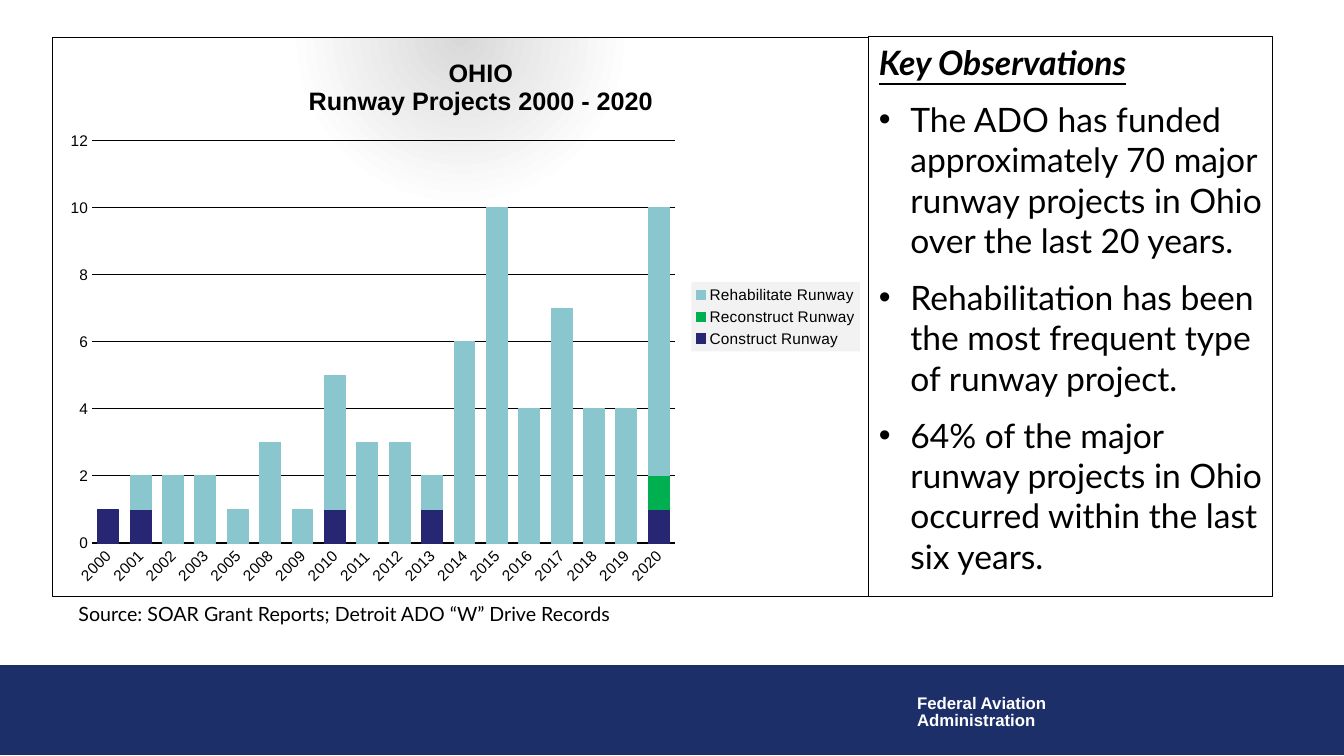
from lxml import etree
from pptx import Presentation
from pptx import util as u
from pptx.chart import data
from pptx.dml import color
from pptx.enum import chart as ch
from pptx.enum import shapes, text
from pptx.oxml import parse_xml
from pptx.oxml import ns

COLORS = {
    "black": "000000", "white": "FFFFFF", "band": "1D2F68",
    "construct": "262673", "reconstruct": "00B050", "rehabilitate": "8AC6CD",
    "legend": "F2F2F2", "glow": "D9D9D9",
}
NAMESPACES = ns.nsdecls("c", "a")


def style(font, size, name="Arial", ink="black", bold=False):
    font.size, font.name, font.bold = u.Pt(size), name, bold
    font.color.rgb = color.RGBColor.from_string(COLORS[ink])


def place_in_chart(parent, index, **settings):
    for old in parent.findall(ns.qn("c:layout")):
        parent.remove(old)
    values = "".join(f'<c:{key} val="{value}"/>' for key, value in settings.items())
    parent.insert(index, parse_xml(
        f"<c:layout {NAMESPACES}><c:manualLayout>{values}</c:manualLayout></c:layout>"))


deck = Presentation()
deck.slide_width, deck.slide_height = u.Pt(960), u.Pt(540)
slide = deck.slides.add_slide(deck.slide_layouts[1])
title = slide.shapes.title
title.element.getparent().remove(title.element)

# Footer band with agency name
band = slide.shapes.add_shape(
    shapes.MSO_SHAPE.RECTANGLE, u.Pt(0), u.Pt(475.2), u.Pt(960), u.Pt(64))
band.shadow.inherit = False
band.fill.solid()
band.fill.fore_color.rgb = color.RGBColor.from_string(COLORS["band"])
band.line.color.rgb = color.RGBColor.from_string(COLORS["band"])
band.line.width = u.Pt(0.75)

agency = slide.shapes.add_textbox(u.Pt(648), u.Pt(493.2), u.Pt(108), u.Pt(31.7))
agency.text_frame.word_wrap = False
agency.text_frame.text = "Federal Aviation\nAdministration"
for line in agency.text_frame.paragraphs:
    line.line_spacing = 0.85
    style(line.runs[0].font, 12, ink="white", bold=True)

# Runway projects by year
years = [2000, 2001, 2002, 2003, 2005, *range(2008, 2021)]
projects = {
    "Construct": {2000: 1, 2001: 1, 2010: 1, 2013: 1, 2020: 1},
    "Reconstruct": {2020: 1},
    "Rehabilitate": dict(zip(
        years[1:], [1, 2, 2, 1, 3, 1, 4, 3, 3, 1, 6, 10, 4, 7, 4, 4, 8])),
}
runway_data = data.CategoryChartData(number_format="0")
runway_data.categories = [str(year) for year in years]
for kind, counts in projects.items():
    runway_data.add_series(f"{kind} Runway", [counts.get(year) for year in years])
runways = slide.shapes.add_chart(
    ch.XL_CHART_TYPE.COLUMN_STACKED, u.Pt(37.4), u.Pt(26.2), u.Pt(583.2), u.Pt(400.1),
    runway_data).chart
style(runways.font, 10)

stacks = runways.plots[0]
stacks.gap_width, stacks.overlap = 55, 100
stacks.vary_by_categories = False
for kind, series in zip(projects, stacks.series):
    shade = color.RGBColor.from_string(COLORS[kind.lower()])
    series.format.fill.solid()
    series.format.fill.fore_color.rgb = shade
    series.format.line.color.rgb = shade
    series.format.line.width = u.Pt(0.75)

# Axes
year_axis, count_axis = runways.category_axis, runways.value_axis
for axis in (year_axis, count_axis):
    axis.major_tick_mark = axis.minor_tick_mark = ch.XL_TICK_MARK.NONE
    style(axis.tick_labels.font, 11)
year_axis.format.line.color.rgb = color.RGBColor.from_string(COLORS["black"])
year_axis.format.line.width = u.Pt(2)
year_axis._element.find(ns.qn("c:txPr")).find(ns.qn("a:bodyPr")).set("rot", "-2700000")
count_axis.minimum_scale, count_axis.maximum_scale, count_axis.major_unit = 0, 12, 2
count_axis.format.line.fill.background()
grid = count_axis.major_gridlines.format.line
grid.color.rgb = color.RGBColor.from_string(COLORS["black"])
grid.width = u.Pt(0.75)

# Chart title, plot area and legend
runways.has_title = True
heading = runways.chart_title
heading.text_frame.text = "OHIO\nRunway Projects 2000 - 2020"
for line in heading.text_frame.paragraphs:
    style(line.runs[0].font, 18, bold=True)
place_in_chart(heading._element, 1, xMode="edge", yMode="edge", x=0.31, y=0.03)
plot_area = runways._chartSpace.chart.plotArea
place_in_chart(plot_area, 0, layoutTarget="inner", xMode="edge", yMode="edge",
               x=0.048, y=0.185, w=0.715, h=0.72)
runways.has_legend = True
runways.legend.position = ch.XL_LEGEND_POSITION.RIGHT
runways.legend.include_in_layout = False
style(runways.legend.font, 11)
runways.legend._element.find(ns.qn("c:txPr")).addprevious(parse_xml(
    f'<c:spPr {NAMESPACES}><a:solidFill><a:srgbClr val="{COLORS["legend"]}"/>'
    "</a:solidFill></c:spPr>"))

# Chart background glow and border
stops = "".join(
    f'<a:gs pos="{position}"><a:srgbClr val="{COLORS[name]}"/></a:gs>'
    for position, name in ((0, "glow"), (35000, "white"), (100000, "white")))
runways._chartSpace.find(ns.qn("c:txPr")).addprevious(parse_xml(
    f'<c:spPr {NAMESPACES}><a:gradFill><a:gsLst>{stops}</a:gsLst><a:path path="circle">'
    '<a:fillToRect l="50000" t="-80000" r="50000" b="180000"/></a:path></a:gradFill>'
    f'<a:ln w="9525"><a:solidFill><a:srgbClr val="{COLORS["black"]}"/></a:solidFill>'
    "</a:ln></c:spPr>"))

# Source line
source = slide.shapes.add_textbox(u.Pt(49), u.Pt(426.2), u.Pt(521.3), u.Pt(24.5))
source.text_frame.word_wrap = True
source.text_frame.text = "Source: SOAR Grant Reports; Detroit ADO “W” Drive Records"
style(source.text_frame.paragraphs[0].runs[0].font, 14, "Lato")

# Key observations
observations = slide.placeholders[1]
observations.left, observations.top = u.Pt(620.6), u.Pt(26.2)
observations.width, observations.height = u.Pt(288.7), u.Pt(399.6)
observations.line.color.rgb = color.RGBColor.from_string(COLORS["black"])
observations.line.width = u.Pt(0.75)
frame = observations.text_frame
frame.text = "\n".join([
    "Key Observations",
    "The ADO has funded approximately 70 major runway projects in Ohio "
    "over the last 20 years.",
    "Rehabilitation has been the most frequent type of runway project.",
    "64% of the major runway projects in Ohio occurred within the last six years.",
])
frame.auto_size = text.MSO_AUTO_SIZE.NONE
frame.vertical_anchor = text.MSO_ANCHOR.TOP
for number, point in enumerate(frame.paragraphs):
    is_heading = number == 0
    indent = 0 if is_heading else u.Pt(22.5)
    properties = point._p.get_or_add_pPr()
    properties.set("marL", str(indent))
    properties.set("indent", str(-indent))
    if is_heading:
        etree.SubElement(properties, ns.qn("a:buNone"))
    else:
        etree.SubElement(properties, ns.qn("a:buFont"), typeface="Arial")
        etree.SubElement(properties, ns.qn("a:buChar"), char="•")
    point.space_before = u.Pt(0 if is_heading else 12)
    font = point.runs[0].font
    style(font, 24, "Lato", bold=is_heading)
    font.italic = font.underline = is_heading

deck.save("out.pptx")
